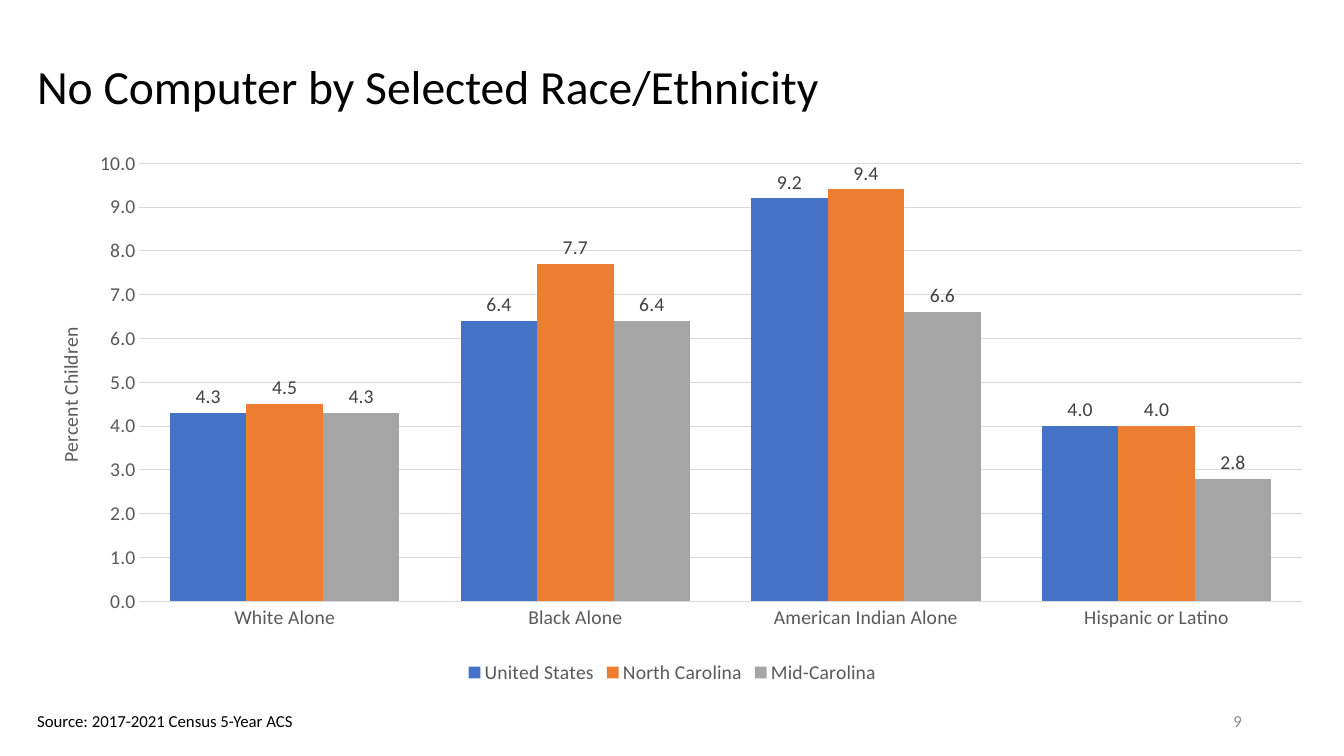
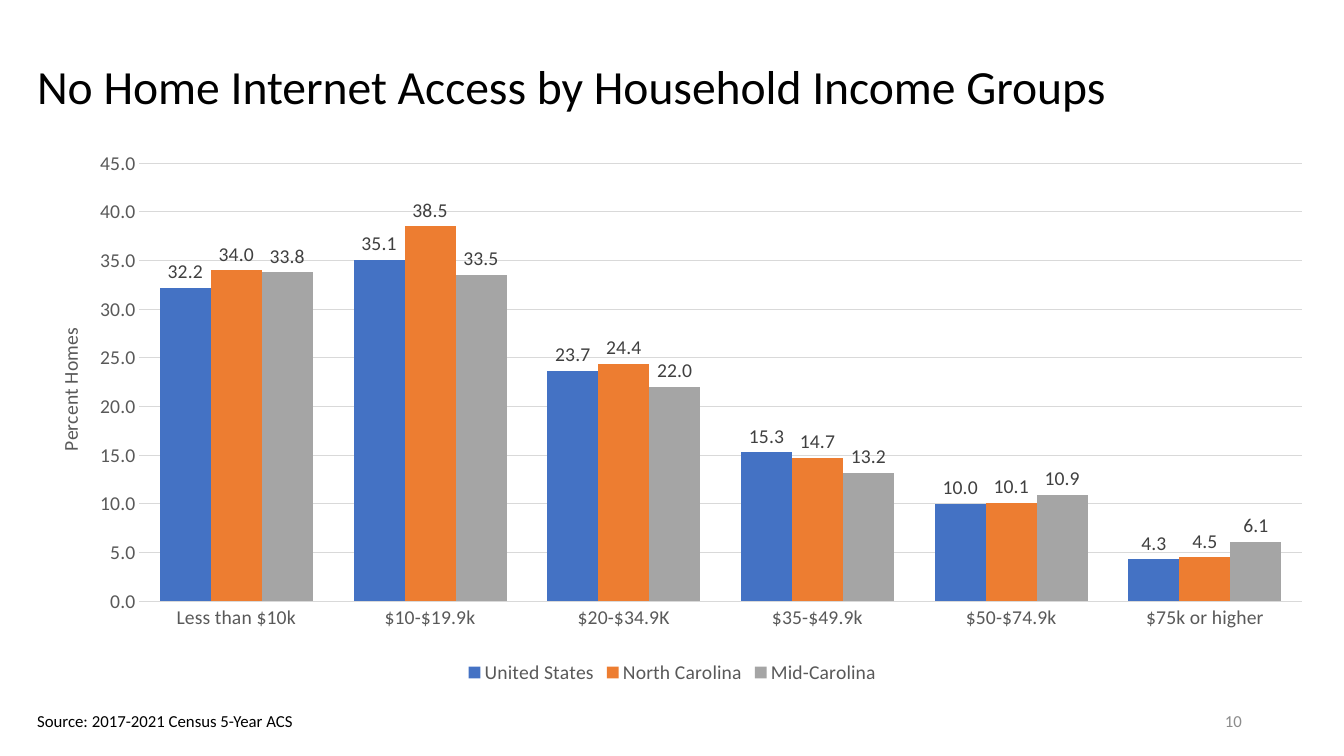
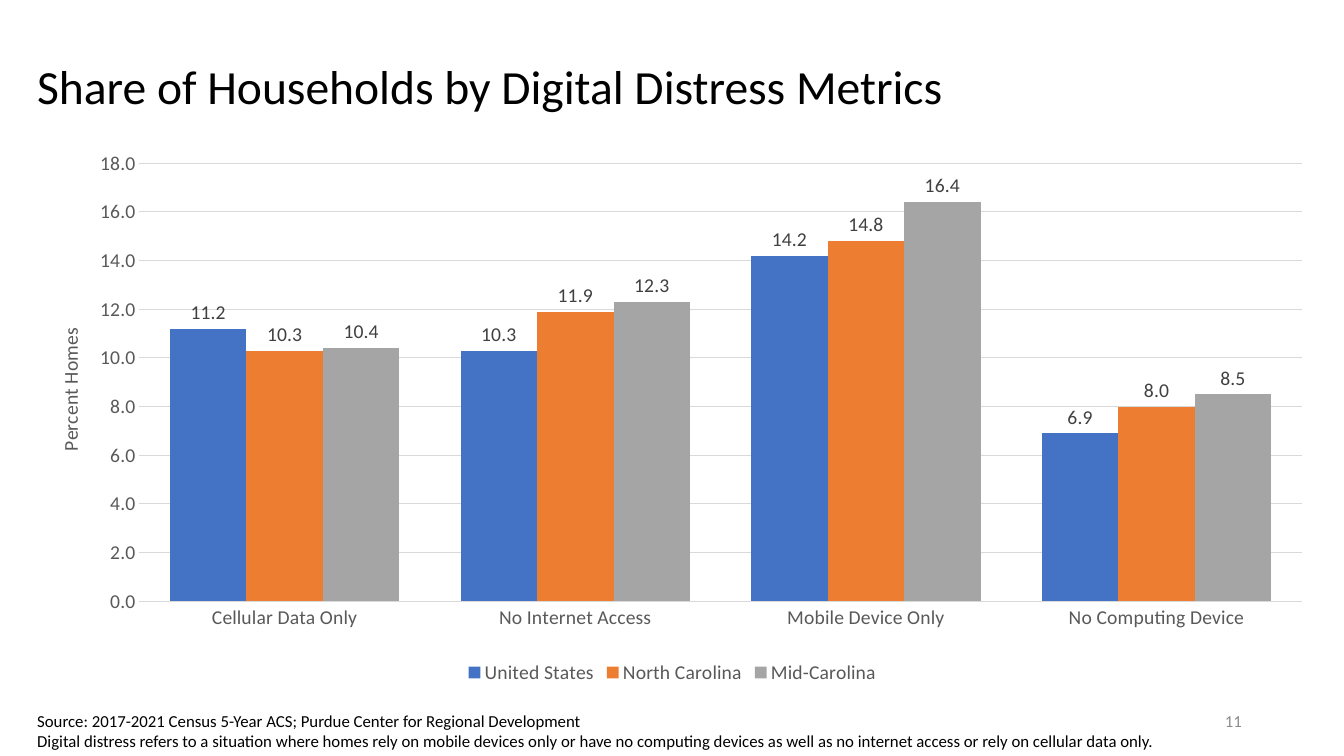
import lxml.etree
import pptx
import pptx.chart.data
import pptx.dml.color
import pptx.enum.chart
import pptx.enum.text
import pptx.util

Pt = pptx.util.Pt
RGBColor = pptx.dml.color.RGBColor
ALIGN = pptx.enum.text.PP_ALIGN
ANCHOR = pptx.enum.text.MSO_ANCHOR
FIT = pptx.enum.text.MSO_AUTO_SIZE

BLACK = RGBColor(0x00, 0x00, 0x00)
PAGE_GRAY = RGBColor(0x8C, 0x8C, 0x8C)
AXIS_GRAY = RGBColor(0x59, 0x59, 0x59)
LABEL_GRAY = RGBColor(0x40, 0x40, 0x40)
GRID_GRAY = RGBColor(0xD9, 0xD9, 0xD9)
BLUE = RGBColor(0x44, 0x72, 0xC4)
ORANGE = RGBColor(0xED, 0x7D, 0x31)
GRAY = RGBColor(0xA5, 0xA5, 0xA5)

FONT = "Calibri"
NUMBER_FORMAT = "#,##0.0"
REGIONS = (("United States", BLUE), ("North Carolina", ORANGE), ("Mid-Carolina", GRAY))
CHART_NS = "{http://schemas.openxmlformats.org/drawingml/2006/chart}"
DRAWING_NS = "{http://schemas.openxmlformats.org/drawingml/2006/main}"

LEFT = 19.44
TITLE_AREA = (LEFT, 24.48, 918.72, 78.48)
CHART_AREA = (LEFT, 103, 921.6, 388.8)
NUMBER_AREA = (678.24, 500.4, 216, 28.8)
SOURCE_TOP = 504
SOURCE = "Source: 2017-2021 Census 5-Year ACS"

PAGES = (
    {
        "number": 9,
        "title": "No Computer by Selected Race/Ethnicity",
        "axis_name": "Percent Children",
        "top_value": 10,
        "step": 1,
        "categories": ("White Alone", "Black Alone", "American Indian Alone",
                       "Hispanic or Latino"),
        "values": ((4.3, 6.4, 9.2, 4), (4.5, 7.7, 9.4, 4), (4.3, 6.4, 6.6, 2.8)),
        "sources": (SOURCE,),
        "source_size": (200, 21.6),
    },
    {
        "number": 10,
        "title": "No Home Internet Access by Household Income Groups",
        "axis_name": "Percent Homes",
        "top_value": 45,
        "step": 5,
        "categories": ("Less than $10k", "$10-$19.9k", "$20-$34.9K",
                       "$35-$49.9k", "$50-$74.9k", "$75k or higher"),
        "values": ((32.2, 35.1, 23.7, 15.3, 10, 4.3),
                   (34, 38.5, 24.4, 14.7, 10.1, 4.5),
                   (33.8, 33.5, 22, 13.2, 10.9, 6.1)),
        "sources": (SOURCE,),
        "source_size": (200, 21.6),
    },
    {
        "number": 11,
        "title": "Share of Households by Digital Distress Metrics",
        "axis_name": "Percent Homes",
        "top_value": 18,
        "step": 2,
        "categories": ("Cellular Data Only", "No Internet Access",
                       "Mobile Device Only", "No Computing Device"),
        "values": ((11.2, 10.3, 14.2, 6.9), (10.3, 11.9, 14.8, 8), (10.4, 12.3, 16.4, 8.5)),
        "sources": (
            SOURCE + "; Purdue Center for Regional Development",
            "Digital distress refers to a situation where homes rely on mobile devices only "
            "or have no computing devices as well as no internet access or rely on cellular "
            "data only.",
        ),
        "source_size": (819.36, 36),
    },
)


def style_font(font, size, color):
    font.name = FONT
    font.size = Pt(size)
    font.bold = False
    font.color.rgb = color


def add_text(page, area, lines, size=12, color=BLACK, align=ALIGN.LEFT,
             anchor=ANCHOR.MIDDLE, spacing=1.0, wrap=True, fit=FIT.NONE):
    box = page.shapes.add_textbox(*map(Pt, area))
    frame = box.text_frame
    frame.word_wrap = wrap
    frame.auto_size = fit
    frame.vertical_anchor = anchor
    for index, line in enumerate(lines):
        para = frame.add_paragraph() if index else frame.paragraphs[0]
        para.alignment = align
        para.line_spacing = spacing
        span = para.add_run()
        span.text = line
        style_font(span.font, size, color)


def set_layout(parent, position, **settings):
    for old in parent.findall(CHART_NS + "layout"):
        parent.remove(old)
    layout = lxml.etree.Element(CHART_NS + "layout")
    manual = lxml.etree.SubElement(layout, CHART_NS + "manualLayout")
    for name, value in settings.items():
        lxml.etree.SubElement(manual, CHART_NS + name).set("val", str(value))
    parent.insert(position, layout)


def style_axes(chart, axis_name, top_value, step):
    for axis in (chart.category_axis, chart.value_axis):
        axis.major_tick_mark = pptx.enum.chart.XL_TICK_MARK.NONE
        axis.minor_tick_mark = pptx.enum.chart.XL_TICK_MARK.NONE
        style_font(axis.tick_labels.font, 14, AXIS_GRAY)
    values = chart.value_axis
    values.minimum_scale = 0
    values.maximum_scale = top_value
    values.major_unit = step
    values.tick_labels.number_format = NUMBER_FORMAT
    values.tick_labels.number_format_is_linked = False
    values.format.line.fill.background()
    values.has_major_gridlines = True
    for line in (chart.category_axis.format.line, values.major_gridlines.format.line):
        line.color.rgb = GRID_GRAY
        line.width = Pt(0.75)
    title = values.axis_title
    para = title.text_frame.paragraphs[0]
    span = para.add_run()
    span.text = axis_name
    style_font(span.font, 14, AXIS_GRAY)
    body = title.element.find(".//" + DRAWING_NS + "bodyPr")
    body.set("rot", "-5400000")
    body.set("vert", "horz")
    set_layout(title.element, 1, xMode="edge", yMode="edge", x=0.02, y=0.33)


def style_columns(plot):
    plot.gap_width = 80
    plot.overlap = 0
    plot.vary_by_categories = False
    for series, (_, color) in zip(plot.series, REGIONS):
        series.format.fill.solid()
        series.format.fill.fore_color.rgb = color
        series.invert_if_negative = False
        labels = series.data_labels
        labels.show_value = True
        labels.number_format = NUMBER_FORMAT
        labels.number_format_is_linked = False
        labels.position = pptx.enum.chart.XL_LABEL_POSITION.OUTSIDE_END
        style_font(labels.font, 14, LABEL_GRAY)


def add_column_chart(page, area, axis_name, top_value, step, categories, values):
    data = pptx.chart.data.CategoryChartData(number_format=NUMBER_FORMAT)
    data.categories = categories
    for (region, _), numbers in zip(REGIONS, values):
        data.add_series(region, numbers)
    kind = pptx.enum.chart.XL_CHART_TYPE.COLUMN_CLUSTERED
    chart = page.shapes.add_chart(kind, *map(Pt, area), data).chart
    chart.has_title = False
    style_font(chart.font, 14, BLACK)
    chart.has_legend = True
    chart.legend.position = pptx.enum.chart.XL_LEGEND_POSITION.BOTTOM
    chart.legend.include_in_layout = False
    style_font(chart.legend.font, 14, AXIS_GRAY)
    style_axes(chart, axis_name, top_value, step)
    style_columns(chart.plots[0])
    set_layout(chart.element.find(".//" + CHART_NS + "plotArea"), 0, layoutTarget="inner",
               xMode="edge", yMode="edge", x=0.087, y=0.035, w=0.901, h=0.805)


def add_chart_page(deck, number, title, sources, source_size, **chart_details):
    page = deck.slides.add_slide(deck.slide_layouts[6])
    add_text(page, TITLE_AREA, (title,), size=34, spacing=0.9)
    add_text(page, NUMBER_AREA, (str(number),), color=PAGE_GRAY, align=ALIGN.RIGHT)
    add_column_chart(page, CHART_AREA, **chart_details)
    add_text(page, (LEFT, SOURCE_TOP, *source_size), sources, anchor=ANCHOR.TOP,
             wrap=False, fit=FIT.SHAPE_TO_FIT_TEXT)


def main():
    deck = pptx.Presentation()
    deck.slide_width = Pt(960)
    deck.slide_height = Pt(540)
    for details in PAGES:
        add_chart_page(deck, **details)
    deck.save("out.pptx")


if __name__ == "__main__":
    main()
